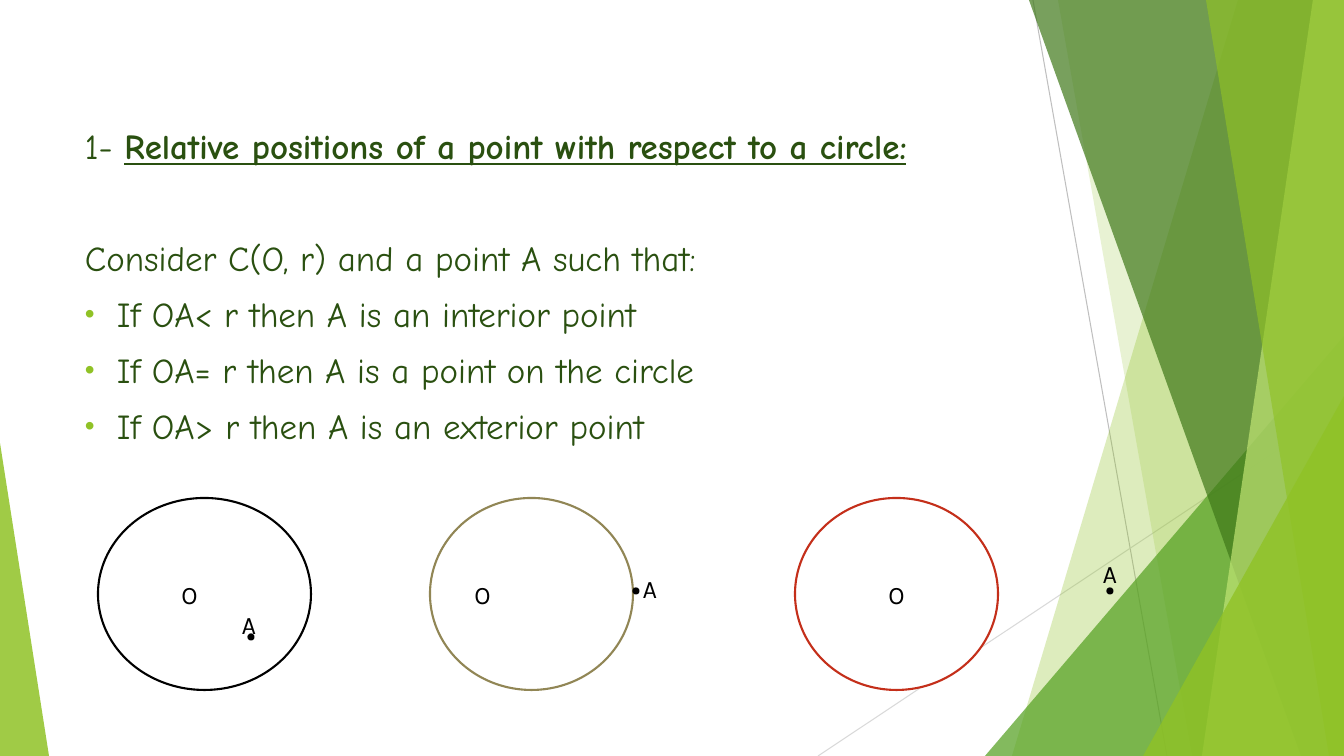
from dataclasses import dataclass

from lxml.etree import SubElement
from pptx import Presentation
from pptx.dml.color import RGBColor
from pptx.enum.shapes import MSO_CONNECTOR, MSO_SHAPE
from pptx.enum.text import MSO_ANCHOR, PP_ALIGN
from pptx.oxml.ns import qn
from pptx.util import Emu, Pt

EMU_PER_PX = 914400 / 100.8
SLIDE_WIDTH, SLIDE_HEIGHT = 1344, 756


@dataclass(frozen=True)
class Theme:
    white: str = "FFFFFF"
    ink: str = "000000"
    body_text: str = "2A5010"
    lime: str = "90C226"
    pale_lime: str = "C0E474"
    leaf: str = "54A021"
    forest: str = "3F7819"
    olive: str = "918655"
    red: str = "C42F1A"
    ray: str = "BFBFBF"
    pale_ray: str = "D9D9D9"
    body_font: str = "Comic Neue"
    label_font: str = "Karla"
    body_size: int = 25
    label_size: int = 18
    outline: float = 1.5
    hairline: float = 0.75


THEME = Theme()


def px(*lengths):
    return [Emu(round(length * EMU_PER_PX)) for length in lengths]


def rgb(color):
    return RGBColor.from_string(color)


def set_font(paragraph, name, size, color):
    paragraph.font.name = name
    paragraph.font.size = Pt(size)
    paragraph.font.color.rgb = rgb(color)


def fill_translucent(shape, color, opacity):
    shape.shadow.inherit = False
    shape.fill.solid()
    shape.fill.fore_color.rgb = rgb(color)
    shape.line.fill.background()
    color_node = shape.fill._xPr.find(qn("a:solidFill"))[0]
    SubElement(color_node, qn("a:alpha"), val=str(opacity * 1000))


def add_ray(slide, start, end, color):
    ray = slide.shapes.add_connector(MSO_CONNECTOR.STRAIGHT, *px(*start, *end))
    ray.line.color.rgb = rgb(color)
    ray.line.width = Pt(THEME.hairline)
    SubElement(ray._element.spPr, qn("a:effectLst"))


def add_band(slide, top_left, bottom_left, color, opacity):
    """A band from a slanted left edge to the right edge of the slide."""
    builder = slide.shapes.build_freeform(top_left, 0, scale=EMU_PER_PX)
    builder.add_line_segments([
        (SLIDE_WIDTH, 0), (SLIDE_WIDTH, SLIDE_HEIGHT), (bottom_left, SLIDE_HEIGHT),
    ])
    fill_translucent(builder.convert_to_shape(), color, opacity)


def add_corner(slide, left, top, right, apex, color, opacity):
    """A triangle on the bottom edge; apex 0 is above its left end, 1 its right."""
    corner = slide.shapes.add_shape(
        MSO_SHAPE.ISOSCELES_TRIANGLE,
        *px(left, top, right - left, SLIDE_HEIGHT - top))
    corner.adjustments[0] = apex
    fill_translucent(corner, color, opacity)


def add_background(slide):
    add_ray(slide, (1033, 0), (1167, 756), THEME.ray)
    add_ray(slide, (1344, 406), (818, 756), THEME.pale_ray)
    add_band(slide, 1238, 1012, THEME.lime, 30)
    add_band(slide, 1058, 1192, THEME.lime, 20)
    add_corner(slide, 985, 336, SLIDE_WIDTH, 1, THEME.leaf, 72)
    add_band(slide, 1029, 1301, THEME.forest, 70)
    add_band(slide, 1313, 1202, THEME.pale_lime, 70)
    add_band(slide, 1206, 1329, THEME.lime, 65)
    add_corner(slide, 1143, 396, SLIDE_WIDTH, 1, THEME.lime, 80)
    add_corner(slide, 0, 443, 49, 0, THEME.lime, 85)


def add_round(slide, left, top, width, height, fill, line):
    round_shape = slide.shapes.add_shape(
        MSO_SHAPE.FLOWCHART_CONNECTOR, *px(left, top, width, height))
    round_shape.shadow.inherit = False
    round_shape.fill.solid()
    round_shape.fill.fore_color.rgb = rgb(fill)
    round_shape.line.color.rgb = rgb(line)
    round_shape.line.width = Pt(THEME.outline)
    return round_shape


def write_label(frame, text):
    frame.vertical_anchor = MSO_ANCHOR.MIDDLE
    paragraph = frame.paragraphs[0]
    paragraph.text = text
    paragraph.alignment = PP_ALIGN.CENTER
    set_font(paragraph, THEME.label_font, THEME.label_size, THEME.ink)


def add_circle(slide, left, width, color, label_shift):
    """A circle with its O moved label_shift px left of the middle."""
    circle = add_round(slide, left, 498, width, 192, THEME.white, color)
    frame = circle.text_frame
    frame.margin_left, frame.margin_right = px(0, 2 * label_shift)
    write_label(frame, "O")


def add_point(slide, dot_x, dot_y, label_x, label_y):
    """A dot and its letter A, both given by their middles."""
    dot, label_width, label_height = 5, 30, 40
    add_round(slide, dot_x - dot / 2, dot_y - dot / 2, dot, dot, THEME.ink, THEME.ink)
    label = slide.shapes.add_textbox(*px(
        label_x - label_width / 2, label_y - label_height / 2,
        label_width, label_height))
    frame = label.text_frame
    frame.word_wrap = True
    frame.margin_left = frame.margin_right = 0
    write_label(frame, "A")


def add_bullet(paragraph):
    indent = px(32)[0]
    properties = paragraph._p.get_or_add_pPr()
    properties.set("marL", str(indent))
    properties.set("indent", str(-indent))
    bullet_color = SubElement(properties, qn("a:buClr"))
    SubElement(bullet_color, qn("a:srgbClr"), val=THEME.lime)
    SubElement(properties, qn("a:buSzPct"), val="80000")
    SubElement(properties, qn("a:buFont"), typeface="Arial")
    SubElement(properties, qn("a:buChar"), char="•")


def add_lesson(slide):
    frame = slide.shapes.add_textbox(*px(75, 120, 998, 427)).text_frame
    frame.word_wrap = True
    heading = frame.paragraphs[0]
    heading.add_run().text = "1- "
    title = heading.add_run()
    title.text = "Relative positions of a point with respect to a circle:"
    title.font.bold = title.font.underline = True
    intro = frame.add_paragraph()
    intro.text = "Consider C(O, r) and a point A such that:"
    for case in (
        "If OA< r then A is an interior point",
        "If OA= r then A is a point on the circle",
        "If OA> r then A is an exterior point",
    ):
        paragraph = frame.add_paragraph()
        paragraph.text = case
        add_bullet(paragraph)
    for paragraph in frame.paragraphs:
        paragraph.space_before = Pt(10)
        set_font(paragraph, THEME.body_font, THEME.body_size, THEME.body_text)
    intro.space_before = Pt(50)


def main():
    presentation = Presentation()
    presentation.slide_width, presentation.slide_height = px(SLIDE_WIDTH, SLIDE_HEIGHT)
    slide = presentation.slides.add_slide(presentation.slide_layouts[6])
    add_background(slide)
    add_circle(slide, 98, 213, THEME.ink, 15)
    add_circle(slide, 430, 203, THEME.olive, 49)
    add_circle(slide, 795, 203, THEME.red, 0)
    add_point(slide, 251, 637, 249, 624)
    add_point(slide, 636, 591, 650, 588)
    add_point(slide, 1110, 591, 1110, 573)
    add_lesson(slide)
    presentation.save("out.pptx")


if __name__ == "__main__":
    main()
